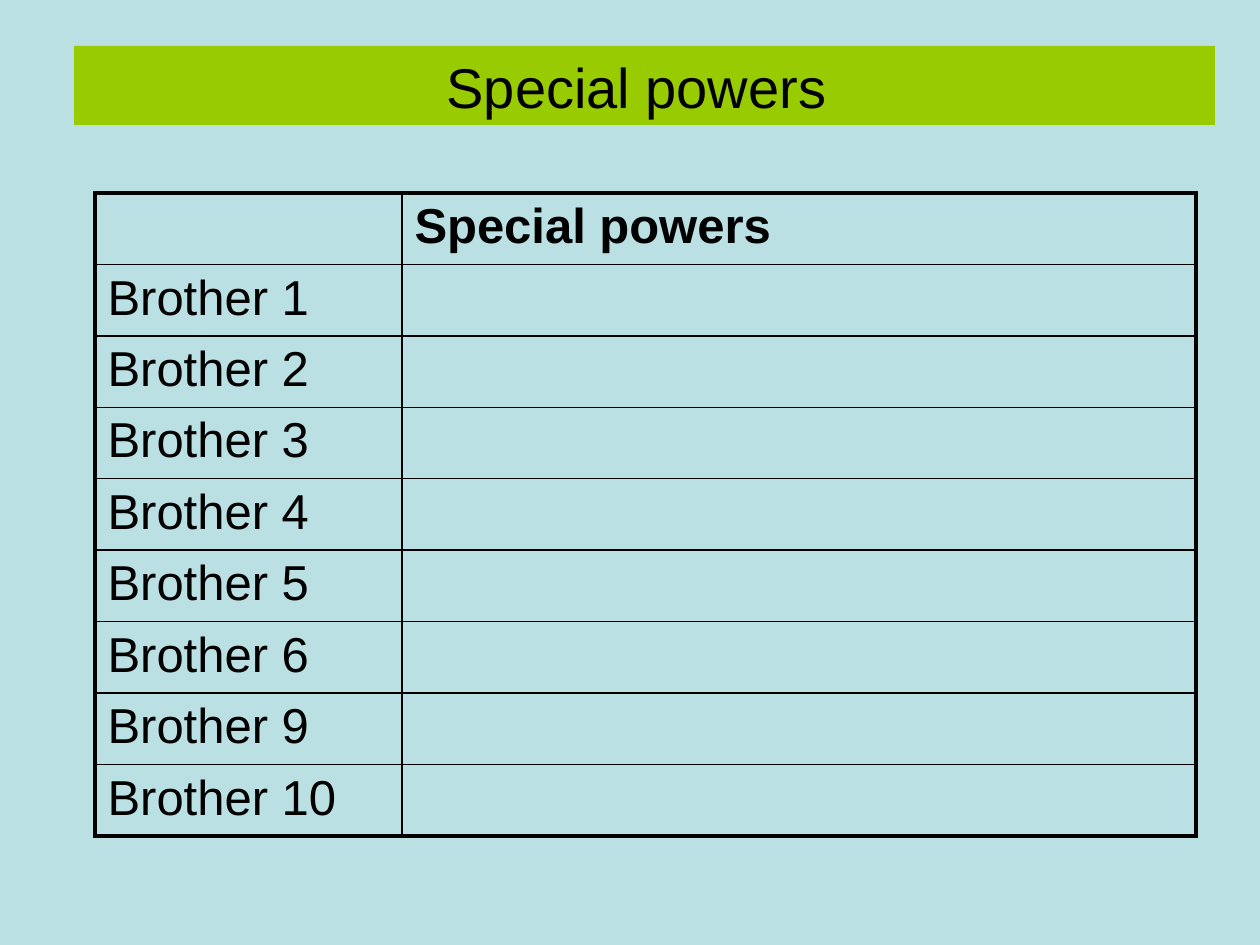
from lxml import etree
from pptx import Presentation, util as u
from pptx.dml.color import RGBColor
from pptx.enum import shapes, text
from pptx.oxml import ns

SCALE = 914400 // 126
THIN, THICK = 1, 2.25


def px(n):
    return u.Emu(n * SCALE)


def hue(code):
    return RGBColor.from_string(code)


class Deck:
    font = "Arial"
    ink = "000000"

    def __init__(self, wide, high, back):
        self.prs = Presentation()
        self.prs.slide_width = px(wide)
        self.prs.slide_height = px(high)
        self.slide = self.prs.slides.add_slide(self.prs.slide_layouts[6])
        fill = self.slide.background.fill
        fill.solid()
        fill.fore_color.rgb = hue(back)

    def label(self, frame, words, size, bold=False):
        para = frame.paragraphs[0]
        para.text = words
        para.font.name = self.font
        para.font.size = u.Pt(size)
        para.font.bold = bold
        para.font.color.rgb = hue(self.ink)
        return para

    def bar(self, x, y, w, h, fill, words, size):
        box = self.slide.shapes.add_shape(
            shapes.MSO_SHAPE.RECTANGLE, px(x), px(y), px(w), px(h))
        box.shadow.inherit = False
        box.fill.solid()
        box.fill.fore_color.rgb = hue(fill)
        box.line.fill.background()
        box.text_frame.vertical_anchor = text.MSO_ANCHOR.TOP
        para = self.label(box.text_frame, words, size)
        para.alignment = text.PP_ALIGN.CENTER

    def edge(self, cell, side, width):
        line = etree.SubElement(cell._tc.get_or_add_tcPr(), ns.qn(f"a:ln{side}"),
                                w=str(u.Pt(width)))
        fill = etree.SubElement(line, ns.qn("a:solidFill"))
        etree.SubElement(fill, ns.qn("a:srgbClr"), val=self.ink)

    def table(self, x, y, h, cols, rows, size):
        grid = self.slide.shapes.add_table(
            len(rows), len(cols), px(x), px(y), px(sum(cols)), px(h)).table
        for col, wide in zip(grid.columns, cols):
            col.width = px(wide)
        for r, row in enumerate(rows):
            grid.rows[r].height = px(h) // len(rows)
            for c, words in enumerate(row):
                cell = grid.cell(r, c)
                outer = {"L": c == 0, "R": c == len(cols) - 1,
                         "T": r == 0, "B": r == len(rows) - 1}
                for side, out in outer.items():
                    self.edge(cell, side, THICK if out else THIN)
                cell.fill.background()
                if words:
                    self.label(cell.text_frame, words, size, bold=r == 0)


def main():
    deck = Deck(1260, 945, "BBE0E3")
    deck.bar(74, 46, 1141, 79, "99CC00", "Special powers ", 32)
    names = [(f"Brother {n}", "") for n in (1, 2, 3, 4, 5, 6, 9, 10)]
    deck.table(95, 193, 643, (307, 794), [("", "Special powers"), *names], 28)
    deck.prs.save("out.pptx")


if __name__ == "__main__":
    main()
